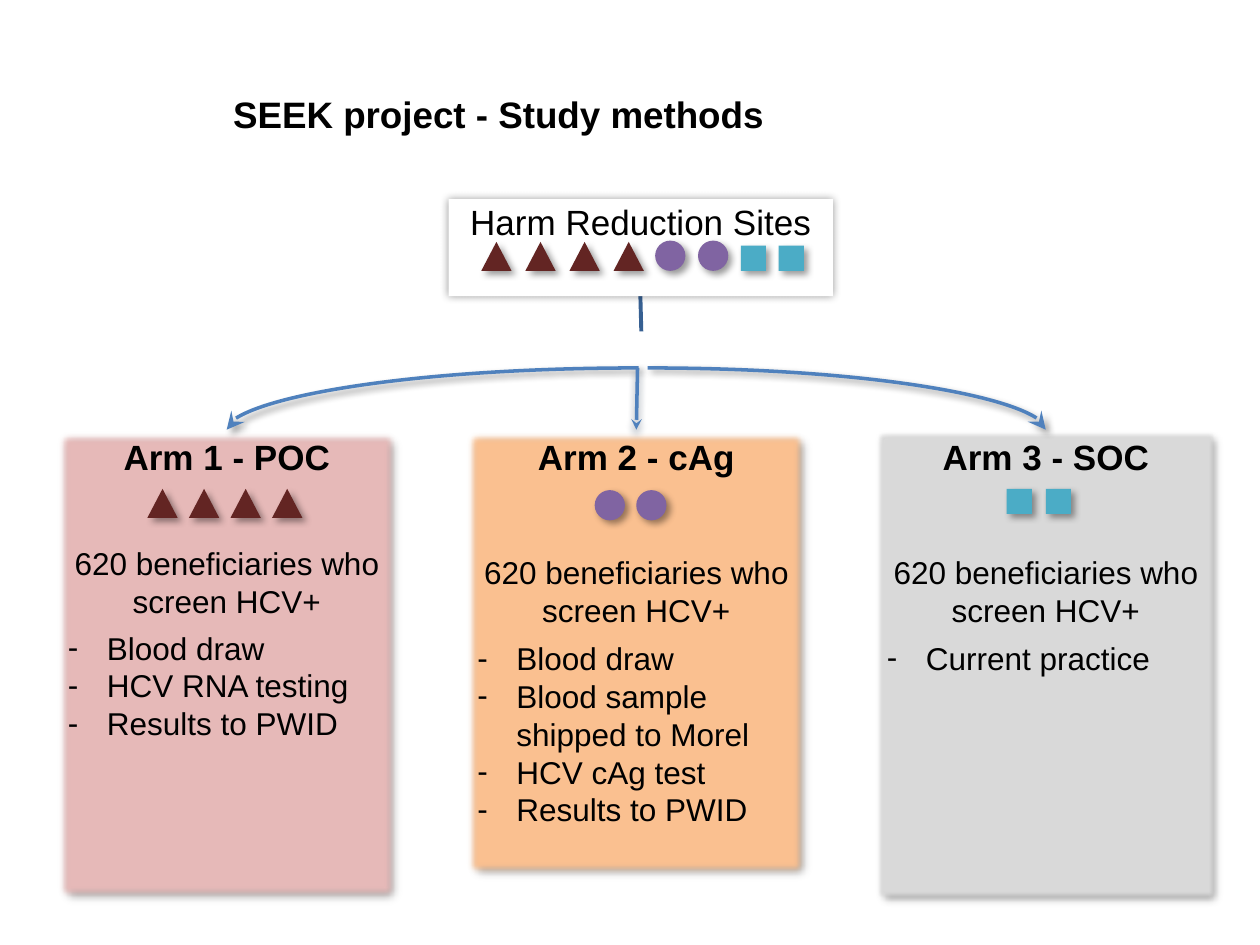
from pptx import Presentation, util as u
from pptx.dml.color import RGBColor
from pptx.enum import shapes, text
from pptx.oxml import parse_xml
from pptx.oxml.ns import nsdecls

BLACK = RGBColor(0x00, 0x00, 0x00)
WHITE = RGBColor(0xFF, 0xFF, 0xFF)
MAROON = RGBColor(0x63, 0x25, 0x23)
PURPLE = RGBColor(0x80, 0x64, 0xA2)
TEAL = RGBColor(0x4B, 0xAC, 0xC6)
PINK = RGBColor(0xE6, 0xB9, 0xB8)
ORANGE = RGBColor(0xFA, 0xC0, 0x90)
GREY = RGBColor(0xD9, 0xD9, 0xD9)
BLUE = RGBColor(0x4F, 0x81, 0xBD)
DARK_BLUE = RGBColor(0x37, 0x60, 0x92)
SHADE = RGBColor(0x1B, 0x2D, 0x43)

RECTANGLE = shapes.MSO_SHAPE.RECTANGLE
STRAIGHT = shapes.MSO_CONNECTOR.STRAIGHT
CURVE = shapes.MSO_CONNECTOR.CURVE

# Shadow: colour, opacity in percent, blur and distance in points, angle
SOFT_SHADOW = (BLACK, 40, 4, 3, 45)
GLOW_SHADOW = (BLACK, 40, 5, 0, 0)
ARROW_SHADOW = (SHADE, 48, 4.5, 3, 90)

# Symbol: preset, colour, width, height
TRIANGLE = (shapes.MSO_SHAPE.ISOSCELES_TRIANGLE, MAROON, 0.24, 0.23)
CIRCLE = (shapes.MSO_SHAPE.OVAL, PURPLE, 0.24, 0.24)
SQUARE = (RECTANGLE, TEAL, 0.2, 0.2)


class StudySlide:
    font = "Arial"

    def __init__(self, slide):
        self.slide = slide

    def effects(self, shape, shadow=None, soft_edge=0):
        """Replace theme effects with the given shadow and soft edge (points)."""
        effect_list = parse_xml(f"<a:effectLst {nsdecls('a')}/>")
        if shadow:
            color, opacity, blur, distance, angle = shadow
            effect_list.append(parse_xml(
                f'<a:outerShdw {nsdecls("a")} blurRad="{u.Pt(blur)}" dist="{u.Pt(distance)}"'
                f' dir="{angle * 60000}" algn="tl" rotWithShape="0"><a:srgbClr val="{color}">'
                f'<a:alpha val="{opacity * 1000}"/></a:srgbClr></a:outerShdw>'))
        if soft_edge:
            effect_list.append(parse_xml(
                f'<a:softEdge {nsdecls("a")} rad="{u.Pt(soft_edge)}"/>'))
        shape._element.spPr.append(effect_list)

    def style(self, paragraph, size, bold=False, align=text.PP_ALIGN.CENTER):
        paragraph.alignment = align
        for run in paragraph.runs:
            run.font.name = self.font
            run.font.size = u.Pt(size)
            run.font.bold = bold
            run.font.color.rgb = BLACK

    def title(self, wording, left, top, width, height):
        title = self.slide.shapes.title
        title.left, title.top = u.Inches(left), u.Inches(top)
        title.width, title.height = u.Inches(width), u.Inches(height)
        title.text_frame.text = wording
        title.text_frame.vertical_anchor = text.MSO_ANCHOR.MIDDLE
        self.style(title.text_frame.paragraphs[0], 21, True, text.PP_ALIGN.LEFT)

    def shape(self, preset, color, left, top, width, height,
              shadow=SOFT_SHADOW, soft_edge=0):
        shape = self.slide.shapes.add_shape(
            preset, u.Inches(left), u.Inches(top), u.Inches(width), u.Inches(height))
        shape.fill.solid()
        shape.fill.fore_color.rgb = color
        shape.line.fill.background()
        self.effects(shape, shadow, soft_edge)
        return shape

    def symbols(self, symbol, count, left, top, step):
        preset, color, width, height = symbol
        for index in range(count):
            self.shape(preset, color, left + index * step, top, width, height)

    def sites_box(self, wording, left, top, width, height):
        box = self.shape(RECTANGLE, WHITE, left, top, width, height, GLOW_SHADOW)
        frame = box.text_frame
        frame.text = wording
        frame.word_wrap = True
        frame.vertical_anchor = text.MSO_ANCHOR.TOP
        frame.margin_left = frame.margin_right = u.Inches(0.01)
        frame.margin_top = u.Inches(0.05)
        frame.paragraphs[0].line_spacing = 0.9
        self.style(frame.paragraphs[0], 20)

    def arm(self, heading, steps, color, left, height, gap, step_gap, soft_edge):
        """Draw an arm; gap and step_gap are points above the group and the steps."""
        box = self.shape(RECTANGLE, color, left, 3.41, 2.72, height, soft_edge=soft_edge)
        frame = box.text_frame
        frame.word_wrap = True
        frame.vertical_anchor = text.MSO_ANCHOR.TOP
        frame.text = "\n".join([heading, "620 beneficiaries who screen HCV+", *steps])
        heading_paragraph, group, *step_paragraphs = frame.paragraphs
        self.style(heading_paragraph, 20, True)
        self.style(group, 18)
        group.space_before = u.Pt(gap)
        step_paragraphs[0].space_before = u.Pt(step_gap)
        for paragraph in step_paragraphs:
            self.style(paragraph, 18, align=text.PP_ALIGN.LEFT)
            properties = paragraph._p.get_or_add_pPr()
            properties.set("marL", str(u.Inches(0.31)))
            properties.set("indent", str(u.Inches(-0.31)))
            properties.append(parse_xml(
                f'<a:buFont {nsdecls("a")} typeface="{self.font}"/>'))
            properties.append(parse_xml(f'<a:buChar {nsdecls("a")} char="-"/>'))

    def connector(self, kind, start, end, color, weight, shadow=None, arrow=None):
        """Draw a line; arrow is the size of its head, sm, med or lg."""
        line = self.slide.shapes.add_connector(
            kind, *(u.Inches(value) for value in (*start, *end)))
        line.line.color.rgb = color
        line.line.width = u.Pt(weight)
        if kind == CURVE:
            line._element.spPr.prstGeom.set("prst", "curvedConnector2")
        if arrow:
            line.line._get_or_add_ln().append(parse_xml(
                f'<a:tailEnd {nsdecls("a")} type="stealth" w="{arrow}" len="{arrow}"/>'))
        self.effects(line, shadow)


def main():
    presentation = Presentation()
    presentation.slide_width, presentation.slide_height = u.Inches(10), u.Inches(7.5)
    page = StudySlide(presentation.slides.add_slide(presentation.slide_layouts[5]))

    page.title("SEEK project - Study methods", 1.75, 0.45, 8.15, 0.9)
    page.connector(STRAIGHT, (5.08, 2.26), (5.09, 2.63), DARK_BLUE, 2.25)
    page.sites_box("Harm Reduction Sites", 3.56, 1.58, 3.05, 0.77)

    page.arm("Arm 1 - POC", ["Blood draw", "HCV RNA testing", "Results to PWID"],
             PINK, 0.44, 3.74, 38, 5, 4)
    page.arm("Arm 2 - cAg", ["Blood draw", "Blood sample shipped to Morel",
                             "HCV cAg test", "Results to PWID"],
             ORANGE, 3.69, 3.55, 43, 6, 4)
    page.arm("Arm 3 - SOC", ["Current practice"], GREY, 6.94, 3.74, 43, 6, 2.5)

    page.symbols(TRIANGLE, 4, 3.82, 1.92, 0.35)
    page.symbols(CIRCLE, 2, 5.2, 1.91, 0.34)
    page.symbols(SQUARE, 2, 5.88, 1.95, 0.3)
    page.symbols(TRIANGLE, 4, 1.17, 3.88, 0.33)
    page.symbols(CIRCLE, 2, 4.72, 3.89, 0.33)
    page.symbols(SQUARE, 2, 7.99, 3.88, 0.31)

    page.connector(CURVE, (5.07, 2.92), (1.8, 3.41), BLUE, 2, SOFT_SHADOW, "lg")
    page.connector(CURVE, (5.14, 2.92), (8.3, 3.41), BLUE, 2, SOFT_SHADOW, "lg")
    page.connector(STRAIGHT, (5.06, 2.92), (5.05, 3.41), BLUE, 2, ARROW_SHADOW, "med")

    presentation.save("out.pptx")


if __name__ == "__main__":
    main()
